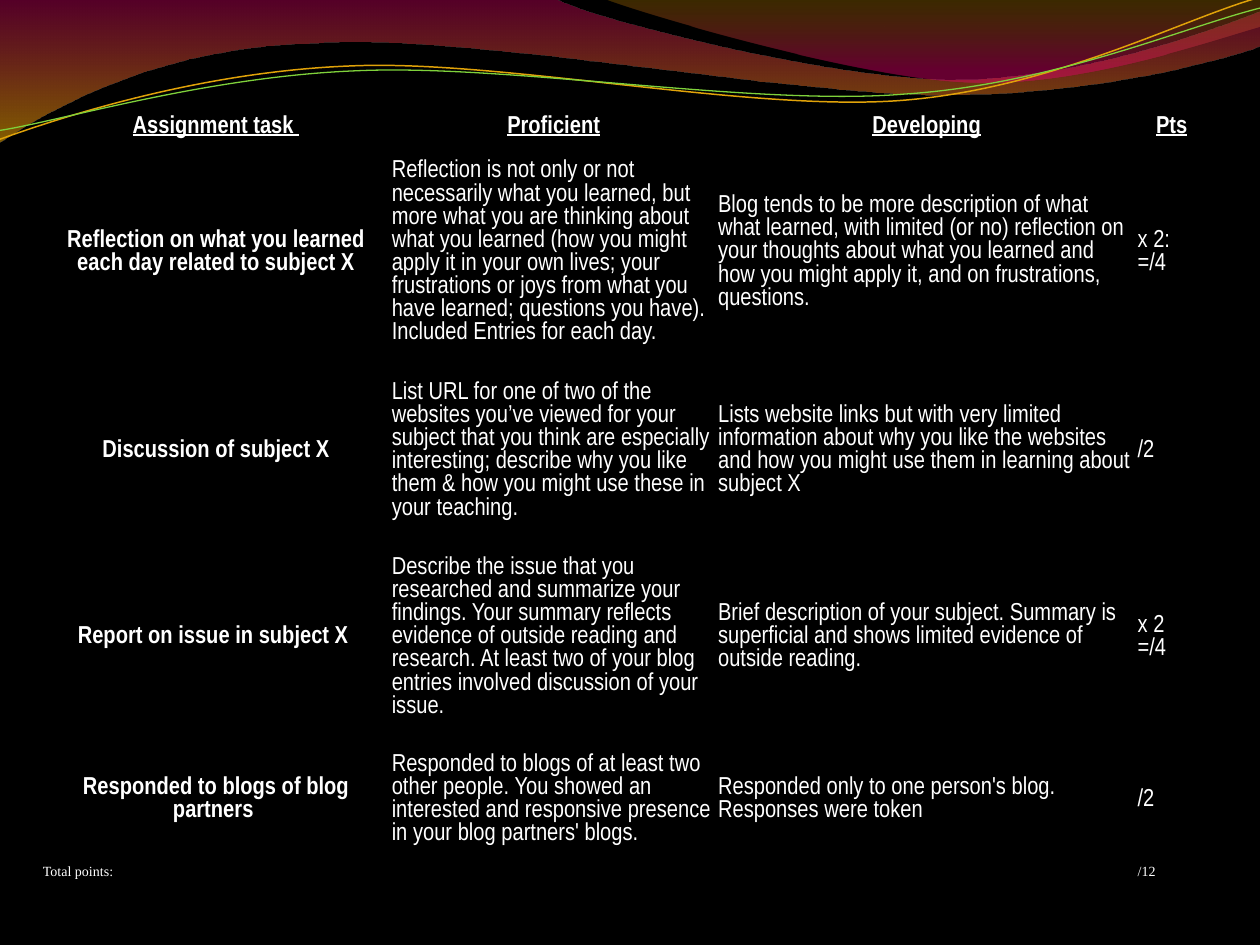
from math import cos, radians, sin

from lxml.etree import SubElement
from pptx import Presentation
from pptx.dml.color import RGBColor
from pptx.enum.text import MSO_ANCHOR, PP_ALIGN
from pptx.oxml.ns import qn
from pptx.util import Emu, Pt

PX = 9144
BLACK = RGBColor(0x00, 0x00, 0x00)
WHITE = RGBColor(0xFF, 0xFF, 0xFF)
MAGENTA = RGBColor(0xBD, 0x00, 0x59)
PINK = RGBColor(0xE1, 0x00, 0x6B)
AMBER = RGBColor(0xF0, 0xAB, 0x00)
OCHRE = RGBColor(0xC3, 0x8B, 0x00)
GOLD = RGBColor(0xE0, 0xA2, 0x09)
GREEN = RGBColor(0x7F, 0xD1, 0x3B)
NO_STYLE = "{2D5ABB26-0587-4C30-8999-92F81FD0307C}"
TILT = 357.3

BANDS = [
    {"box": (-1, -1, 1002, 114),
     "path": [(0, 0), (440, -1),
              (476, 17, 664, 63, 758, 63), (853, 63, 958, 26, 1000, 9),
              (1001, 36),
              (983, 44, 870, 76, 746, 75), (622, 75, 382, 28, 257, 34),
              (129, 36, 46, 83, -1, 113), (0, 0)],
     "stops": [(0, MAGENTA, 45), (100, AMBER, 55)]},
    {"box": (479, -1, 521, 70),
     "path": [(479, -1),
              (509, 11, 682, 62, 769, 65), (856, 69, 961, 32, 1000, 21),
              (1000, 0), (479, -1)],
     "stops": [(0, OCHRE, 30), (80, PINK, 45)]},
]
STRANDS = [
    {"box": (-2, 22, 1002, 71),
     "path": [(0, 111), (48, 93, 158, 57, 277, 52),
              (395, 47, 593, 89, 713, 80), (833, 71, 938, 15, 998, -2)],
     "color": GOLD, "width": 0.85},
    {"box": (-2, 30, 1003, 58),
     "path": [(0, 104), (47, 96, 164, 61, 283, 56),
              (403, 51, 597, 84, 717, 75), (836, 67, 941, 21, 1000, 6)],
     "color": GREEN, "width": 0.75},
]

COLUMNS = [277, 259, 333, 56]
ROWS = [22, 177, 138, 158, 100, 5]
RUBRIC = [
    ["Assignment task ", "Proficient", "Developing", "Pts"],
    ["Reflection on what you learned each day related to subject X",
     "Reflection is not only or not necessarily what you learned, but more what you are "
     "thinking about what you learned (how you might apply it in your own lives; your "
     "frustrations or joys from what you have learned; questions you have). Included "
     "Entries for each day.",
     "Blog tends to be more description of what what learned, with limited (or no) "
     "reflection on your thoughts about what you learned and how you might apply it, "
     "and on frustrations, questions.",
     "x 2:\n=/4"],
    ["Discussion of subject X",
     "List URL for one of two of the websites you’ve viewed for your subject that you "
     "think are especially interesting; describe why you like them & how you might use "
     "these in your teaching.",
     "Lists website links but with very limited information about why you like the "
     "websites and how you might use them in learning about subject X",
     "/2"],
    ["Report on issue in subject X ",
     "Describe the issue that you researched and summarize your findings. Your summary "
     "reflects evidence of outside reading and research. At least two of your blog "
     "entries involved discussion of your issue.",
     "Brief description of your subject. Summary is superficial and shows limited "
     "evidence of outside reading.",
     "x 2\n=/4"],
    ["Responded to blogs of blog partners ",
     "Responded to blogs of at least two other people. You showed an interested and "
     "responsive presence in your blog partners' blogs.",
     "Responded only to one person's blog. Responses were token",
     "/2"],
    ["Total points:", None, None, "/12"],
]

BODY = {"name": "Arial Narrow", "size": Pt(14), "bold": False, "underline": False}
TASK = {**BODY, "bold": True}
HEADING = {**TASK, "underline": True}
TOTAL = {**BODY, "name": "Times New Roman", "size": Pt(8)}
CELL = {"vertical_anchor": MSO_ANCHOR.MIDDLE, "margin_left": PX, "margin_right": PX,
        "margin_top": PX, "margin_bottom": PX}


def set_all(target, values):
    for key, value in values.items():
        setattr(target, key, value)


def to_local(x, y, box, rotation):
    left, top, width, height = box
    angle = radians(-rotation)
    dx, dy = x - left - width / 2, y - top - height / 2
    return (round(width / 2 + dx * cos(angle) - dy * sin(angle)),
            round(height / 2 + dx * sin(angle) + dy * cos(angle)))


def add_outline(slide, left, top, wave, rotation=0):
    x, y, width, height = wave["box"]
    builder = slide.shapes.build_freeform(0, 0, scale=PX)
    builder.add_line_segments([(width, height)], close=False)
    outline = builder.convert_to_shape((left + x) * PX, (top + y) * PX)
    set_all(outline, {"rotation": rotation})
    outline.shadow.inherit = False
    curve = next(outline._element.iter(qn("a:path")))
    for old in list(curve):
        curve.remove(old)
    for i, step in enumerate(wave["path"]):
        tag = "a:moveTo" if i == 0 else "a:lnTo" if len(step) == 2 else "a:cubicBezTo"
        command = SubElement(curve, qn(tag))
        for point in zip(step[::2], step[1::2]):
            px, py = to_local(*point, wave["box"], rotation)
            SubElement(command, qn("a:pt"), x=str(px), y=str(py))
    if wave["path"][0] == wave["path"][-1]:
        SubElement(curve, qn("a:close"))
    return outline


def fade(band, stops):
    band.fill.gradient()
    band.fill.gradient_angle = 270
    stop_list = band.fill._fill._gradFill.find(qn("a:gsLst"))
    for old in list(stop_list):
        stop_list.remove(old)
    for position, color, opacity in stops:
        stop = SubElement(stop_list, qn("a:gs"), pos=str(position * 1000))
        shade = SubElement(stop, qn("a:srgbClr"), val=str(color))
        SubElement(shade, qn("a:alpha"), val=str(opacity * 1000))


def add_waves(slide, left, top):
    for wave in BANDS:
        band = add_outline(slide, left, top, wave)
        fade(band, wave["stops"])
        band.line.fill.background()
    for wave in STRANDS:
        strand = add_outline(slide, left, top, wave, TILT)
        strand.fill.background()
        strand.line.color.rgb = wave["color"]
        strand.line.width = Pt(wave["width"])


def fill_cell(cell, text, font, centred):
    set_all(cell, CELL)
    cell.fill.background()
    if text is None:
        return
    cell.text = text
    for paragraph in cell.text_frame.paragraphs:
        paragraph.alignment = PP_ALIGN.CENTER if centred else PP_ALIGN.LEFT
        for run in paragraph.runs:
            set_all(run.font, font)
            run.font.color.rgb = WHITE


def add_rubric(slide, left, top, width, height):
    box = [Emu(v * PX) for v in (left, top, width, height)]
    rubric = slide.shapes.add_table(len(ROWS), len(COLUMNS), *box).table
    set_all(rubric, {"first_row": False, "horz_banding": False})
    rubric._tbl.tblPr.find(qn("a:tableStyleId")).text = NO_STYLE
    for column, size in zip(rubric.columns, COLUMNS):
        column.width = Emu(size * PX)
    for row, size in zip(rubric.rows, ROWS):
        row.height = Emu(size * PX)
    last = len(ROWS) - 1
    for r, texts in enumerate(RUBRIC):
        for c, text in enumerate(texts):
            font = (HEADING if r == 0 else TOTAL if r == last
                    else TASK if c == 0 else BODY)
            fill_cell(rubric.cell(r, c), text, font, font in (HEADING, TASK))
    rubric.cell(last, 0).merge(rubric.cell(last, 2))


def main():
    deck = Presentation()
    set_all(deck, {"slide_width": Emu(1000 * PX), "slide_height": Emu(750 * PX)})
    slide = deck.slides.add_slide(deck.slide_layouts[6])
    slide.background.fill.solid()
    slide.background.fill.fore_color.rgb = BLACK
    add_waves(slide, 0, 0)
    add_rubric(slide, 33, 90, sum(COLUMNS), sum(ROWS))
    deck.save("out.pptx")


if __name__ == "__main__":
    main()
